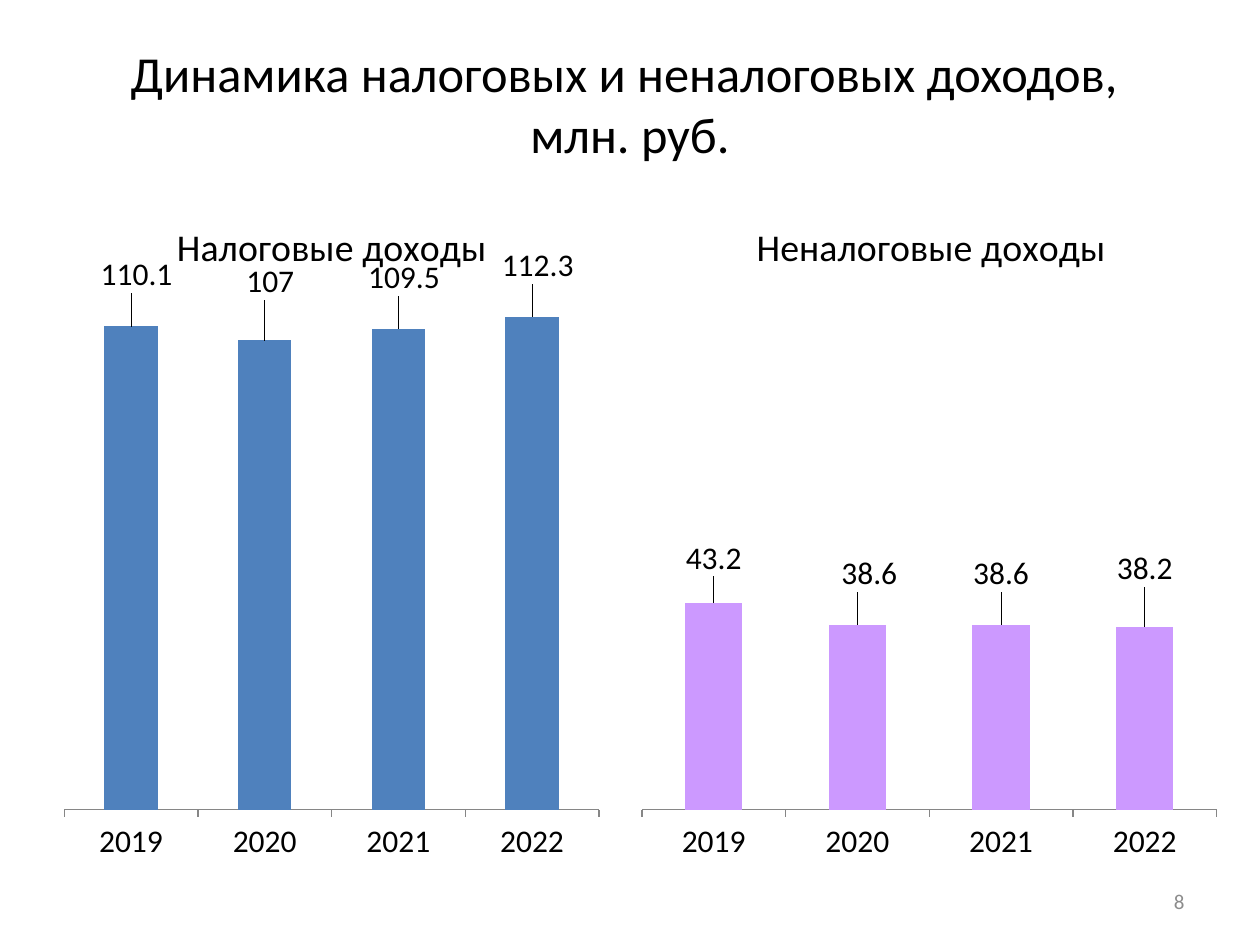
from dataclasses import dataclass

from lxml.etree import SubElement
from pptx import Presentation
from pptx.chart.data import CategoryChartData
from pptx.dml.color import RGBColor
from pptx.enum.chart import XL_CHART_TYPE as ChartType
from pptx.enum.chart import XL_LABEL_POSITION as LabelPosition
from pptx.enum.chart import XL_TICK_MARK as TickMark
from pptx.enum.text import MSO_ANCHOR as Anchor
from pptx.enum.text import MSO_AUTO_SIZE as AutoSize
from pptx.enum.text import PP_ALIGN as Align
from pptx.oxml.ns import qn
from pptx.util import Cm, Pt


@dataclass(frozen=True)
class Theme:
    font: str = "Calibri"
    text: str = "000000"
    muted: str = "8C8C8C"
    axis: str = "868686"
    title_size: float = 28.8
    heading_size: float = 21.6
    chart_size: float = 18
    number_size: float = 12


THEME = Theme()
TITLE = "Динамика налоговых и неналоговых доходов, \vмлн. руб."
PAGE_NUMBER = "8"
YEARS = ["2019", "2020", "2021", "2022"]
CHART_TOP, CHART_HEIGHT = 3.61, 13.97
PLOT_AREA = {"x": 0.02, "y": 0.15, "w": 0.96, "h": 0.76}

# label_shifts: distance of each label from its usual place, as shares of the chart
CHARTS = [
    {
        "heading": "Налоговые доходы",
        "heading_left": 0.21,
        "values": [110.1, 107, 109.5, 112.3],
        "maximum": 120,
        "color": "4F81BD",
        "left": 1.07,
        "width": 11.23,
        "label_shifts": [(0.01, -0.04), (0.01, -0.05), (0.01, -0.04), (0.01, -0.04)],
    },
    {
        "heading": "Неналоговые доходы",
        "heading_left": 0.2,
        "values": [43.2, 38.6, 38.6, 38.2],
        "maximum": 110,
        "color": "CC99FF",
        "left": 12.7,
        "width": 12.07,
        "label_shifts": [(0, -0.03), (0.02, -0.04), (0, -0.04), (0, -0.05)],
    },
]


def format_font(font, size, color=THEME.text):
    font.name = THEME.font
    font.size = Pt(size)
    font.bold = False
    font.color.rgb = RGBColor.from_string(color)


def write_text(box, text, size, color=THEME.text, align=Align.CENTER):
    frame = box.text_frame
    frame.word_wrap = True
    frame.auto_size = AutoSize.NONE
    frame.vertical_anchor = Anchor.MIDDLE
    frame.text = text
    para = frame.paragraphs[0]
    para.alignment = align
    for span in para.runs:
        format_font(span.font, size, color)


def set_layout(parent, index, target=None, modes=(), **shares):
    """Give a chart part a manual layout, in shares of the chart's size."""
    for old in parent.findall(qn("c:layout")):
        parent.remove(old)
    layout = SubElement(parent, qn("c:layout"))
    parent.insert(index, layout)
    manual = SubElement(layout, qn("c:manualLayout"))
    entries = {"layoutTarget": target} if target else {}
    entries.update({mode: "edge" for mode in modes})
    entries.update(shares)
    for name, value in entries.items():
        SubElement(manual, qn(f"c:{name}")).set("val", str(value))


def add_column_chart(page, item):
    data = CategoryChartData()
    data.categories = YEARS
    data.add_series("Series 1", item["values"])
    chart = page.shapes.add_chart(
        ChartType.COLUMN_CLUSTERED, Cm(item["left"]), Cm(CHART_TOP),
        Cm(item["width"]), Cm(CHART_HEIGHT), data,
    ).chart
    format_font(chart.font, THEME.chart_size)
    chart.has_legend = False

    chart.has_title = True
    chart.chart_title.include_in_layout = False
    frame = chart.chart_title.text_frame
    frame.text = item["heading"]
    format_font(frame.paragraphs[0].runs[0].font, THEME.heading_size)

    values = chart.value_axis
    values.minimum_scale, values.maximum_scale = 0, item["maximum"]
    values.has_major_gridlines = False
    values.visible = False
    years = chart.category_axis
    years.major_tick_mark = TickMark.OUTSIDE
    years.format.line.color.rgb = RGBColor.from_string(THEME.axis)

    plot = chart.plots[0]
    plot.gap_width = 150
    plot.vary_by_categories = False
    series = plot.series[0]
    series.format.fill.solid()
    series.format.fill.fore_color.rgb = RGBColor.from_string(item["color"])
    series.data_labels.show_value = True
    for index in range(len(YEARS)):
        series.points[index].data_label.position = LabelPosition.OUTSIDE_END

    edges = ("xMode", "yMode")
    root = chart.element
    set_layout(root.xpath(".//c:plotArea")[0], 0, "inner", edges, **PLOT_AREA)
    set_layout(root.xpath("./c:chart/c:title")[0], 1, modes=edges,
               x=item["heading_left"], y=0.05)
    for label, (x, y) in zip(root.xpath(".//c:dLbl"), item["label_shifts"]):
        set_layout(label, 1, x=x, y=y)


def main():
    deck = Presentation()
    deck.slide_width, deck.slide_height = Cm(25.4), Cm(19.05)
    page = deck.slides.add_slide(deck.slide_layouts[5])

    title = page.shapes.title
    title.left, title.top = Cm(1.27), Cm(0.76)
    title.width, title.height = Cm(22.86), Cm(2.62)
    write_text(title, TITLE, THEME.title_size)

    for item in CHARTS:
        add_column_chart(page, item)

    number = page.shapes.add_textbox(Cm(18.2), Cm(17.66), Cm(5.93), Cm(1.01))
    write_text(number, PAGE_NUMBER, THEME.number_size, THEME.muted, Align.RIGHT)
    deck.save("out.pptx")


if __name__ == "__main__":
    main()
